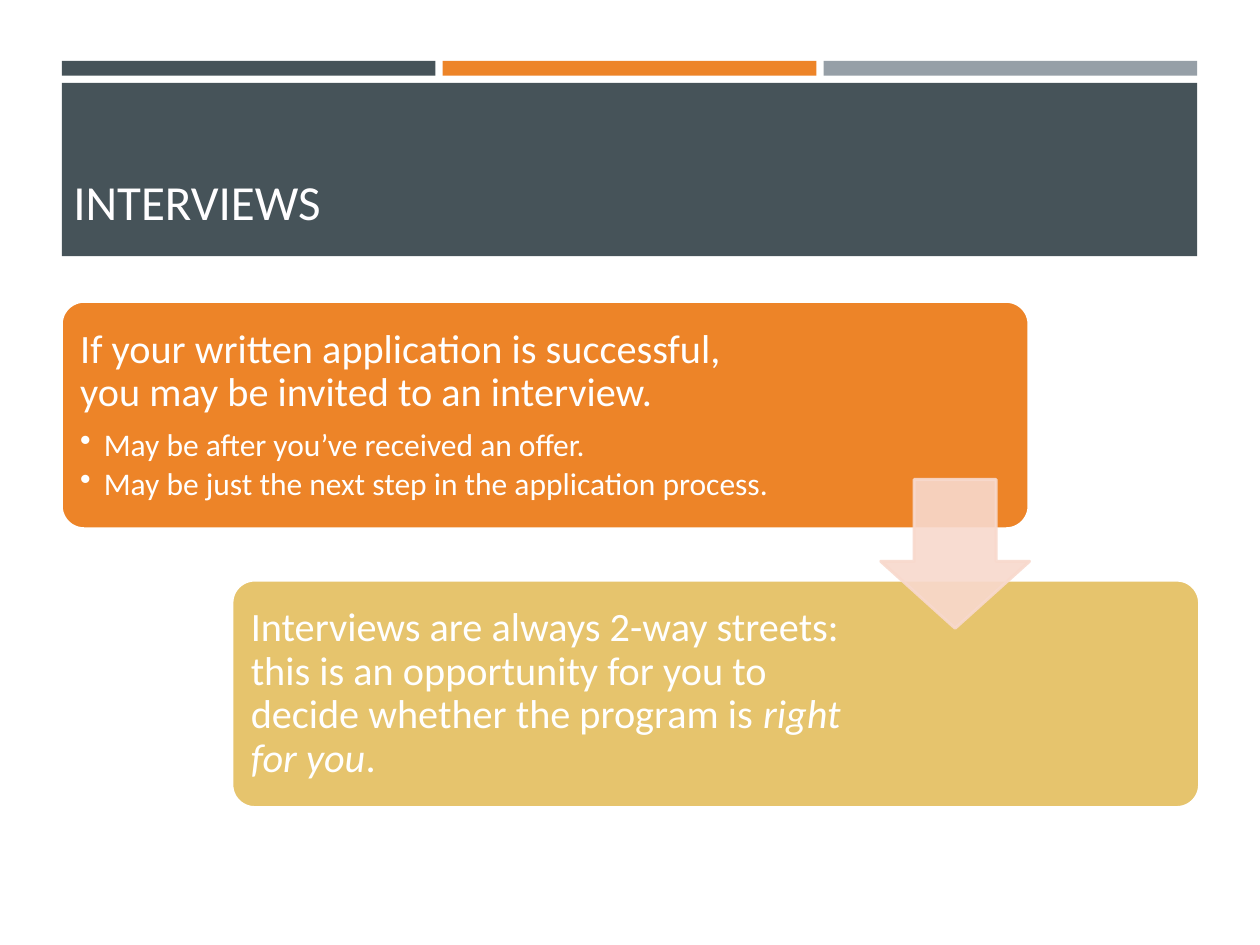
from lxml.etree import SubElement
from pptx import Presentation
from pptx.dml.color import RGBColor
from pptx.enum.shapes import MSO_SHAPE as Shape
from pptx.enum.text import MSO_ANCHOR as Anchor, MSO_AUTO_SIZE as AutoSize, PP_ALIGN as Align
from pptx.oxml.ns import qn
from pptx.util import Pt

SLATE, ORANGE, GRAY = "465359", "ED8428", "969FA7"
GOLD, PINK, WHITE, TITLE_WHITE = "E6C46D", "F8D9CD", "FFFFFF", "FFFEFF"


def color(value):
    return RGBColor.from_string(value)


class Slide:
    font = "Calibri"
    line_width = 1.75

    def __init__(self, deck):
        self.page = deck.slides.add_slide(deck.slide_layouts[5])

    def shape(self, kind, left, top, width, height, fill, line=None, adjust=(), alpha=None):
        box = self.page.shapes.add_shape(kind, Pt(left), Pt(top), Pt(width), Pt(height))
        box.shadow.inherit = False
        for index, value in enumerate(adjust):
            box.adjustments[index] = value
        box.fill.solid()
        box.fill.fore_color.rgb = color(fill)
        if line:
            box.line.color.rgb = color(line)
            box.line.width = Pt(self.line_width)
        else:
            box.line.fill.background()
        if alpha:
            for tone in box.element.spPr.iter(qn("a:srgbClr")):
                SubElement(tone, qn("a:alpha"), val=str(alpha * 1000))

    def frame(self, box, anchor, side, end):
        frame = box.text_frame
        frame.word_wrap = True
        frame.auto_size = AutoSize.NONE
        frame.vertical_anchor = anchor
        frame.margin_left = frame.margin_right = Pt(side)
        frame.margin_top = frame.margin_bottom = Pt(end)
        return frame

    def span(self, para, text, size, tone=WHITE, italic=False):
        span = para.add_run()
        span.text = text
        span.font.name = self.font
        span.font.size = Pt(size)
        span.font.italic = italic
        span.font.color.rgb = color(tone)

    def title(self, text, left, top, width, height):
        box = self.page.shapes.title
        box.left, box.top, box.width, box.height = Pt(left), Pt(top), Pt(width), Pt(height)
        box.element.getparent().append(box.element)
        para = self.frame(box, Anchor.BOTTOM, 7.2, 3.6).paragraphs[0]
        para.alignment = Align.LEFT
        self.span(para, text, 28, TITLE_WHITE)

    def text(self, left, top, width, height, spans, bullets=()):
        box = self.page.shapes.add_textbox(Pt(left), Pt(top), Pt(width), Pt(height))
        frame = self.frame(box, Anchor.MIDDLE, 7, 7)
        para = frame.paragraphs[0]
        para.line_spacing = 0.9
        para.space_after = Pt(8)
        for words, italic in spans:
            self.span(para, words, 23, italic=italic)
        for words in bullets:
            self.bullet(frame.add_paragraph(), words)

    def bullet(self, para, words):
        para.level = 1
        para.line_spacing = 0.9
        para.space_after = Pt(2.7)
        props = para._p.get_or_add_pPr()
        indent = Pt(13.5)
        props.set("marL", str(indent))
        props.set("indent", str(-indent))
        SubElement(props, qn("a:buChar"), char="•")
        self.span(para, words, 18)


def main():
    deck = Presentation()
    deck.slide_width, deck.slide_height = Pt(720), Pt(540)
    slide = Slide(deck)

    left, bar_width, bar_pitch = 35.4, 213.5, 217.6
    for index, fill in enumerate((SLATE, ORANGE, GRAY)):
        slide.shape(Shape.RECTANGLE, left + index * bar_pitch, 34.8, bar_width, 8.4, fill)
    slide.shape(Shape.RECTANGLE, left, 47.4, 648.7, 99, SLATE)
    slide.title("INTERVIEWS", 34.7, 55.4, 651.6, 80)

    steps = [
        (35, 172.2, ORANGE, 419,
         [("If your written application is successful, you may be invited to an interview.", False)],
         ["May be after you’ve received an offer.",
          "May be just the next step in the application process."]),
        (132.5, 331.5, GOLD, 363.6,
         [("Interviews are always 2-way streets: this is an opportunity for you to "
           "decide whether the program is ", False), ("right for you", True), (".", False)],
         []),
    ]
    inset = 3.8
    for card_left, top, fill, text_width, spans, bullets in steps:
        slide.shape(Shape.ROUNDED_RECTANGLE, card_left, top, 553, 130, fill, WHITE, [0.1])
        slide.text(card_left + inset, top + inset, text_width, 122.4, spans, bullets)
    slide.shape(Shape.DOWN_ARROW, 503.3, 274, 85, 85, PINK, PINK, [0.55, 0.45], 90)

    deck.save("out.pptx")


if __name__ == "__main__":
    main()
